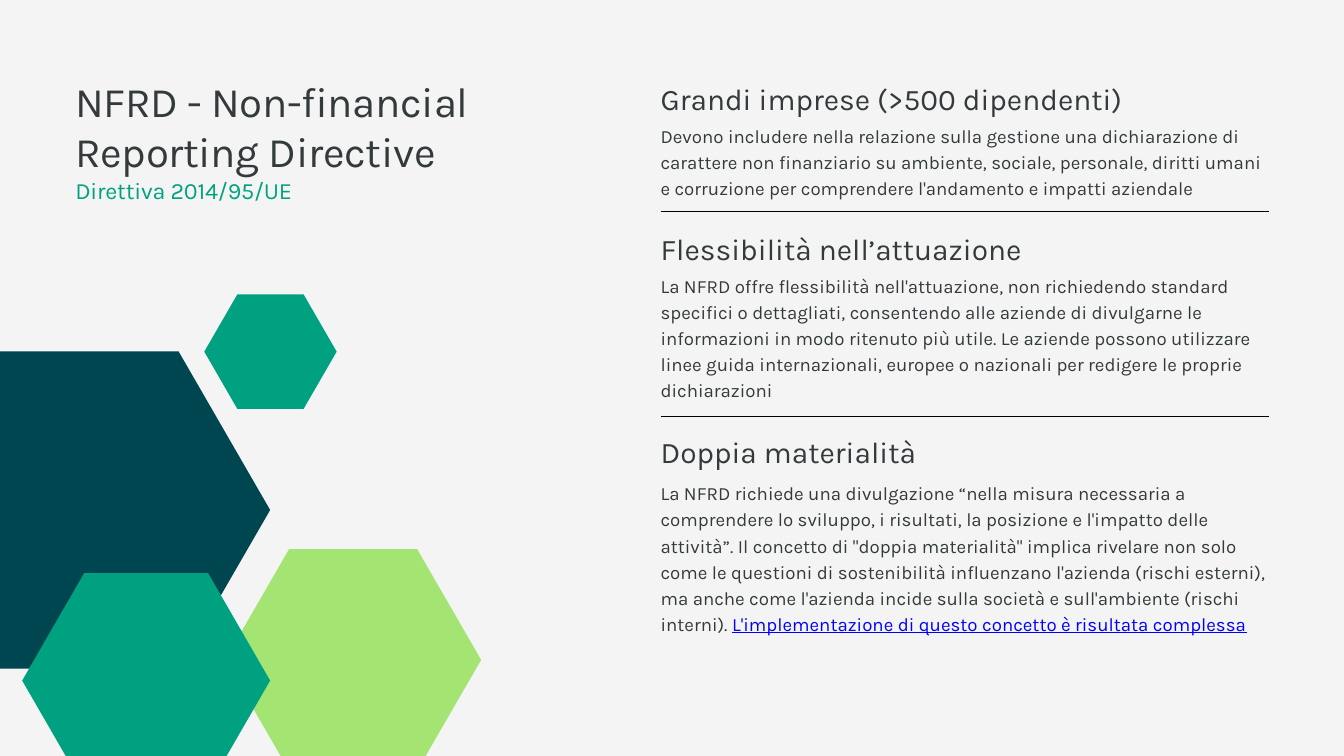
from pptx import Presentation
from pptx import util as u
from pptx.dml.color import RGBColor
from pptx.enum import shapes, text
from lxml import etree

INK, GREEN, NAVY, LIME, LINK = "333A3B", "00A181", "004651", "A4E473", "0000FF"
A = "{http://schemas.openxmlformats.org/drawingml/2006/main}"


def color(fmt, value):
    fmt.rgb = RGBColor.from_string(value)


def add_text(tf, p, words, size, leading, fill=INK, underline=None, spacing=None):
    """Append a formatted run to p and set up its frame and line spacing."""
    for name, value in dict(margin_left=0, margin_top=0, margin_right=0, margin_bottom=0,
                            word_wrap=True, auto_size=text.MSO_AUTO_SIZE.NONE,
                            vertical_anchor=text.MSO_ANCHOR.TOP).items():
        setattr(tf, name, value)
    p.alignment = text.PP_ALIGN.LEFT
    p.line_spacing = u.Pt(leading)
    r = p.add_run()
    r.text = words
    for name, value in dict(name="Karla", size=u.Pt(size), underline=underline).items():
        setattr(r.font, name, value)
    color(r.font.color, fill)
    if spacing is not None:
        r.font._element.set("spc", str(spacing))


prs = Presentation()
prs.slide_width, prs.slide_height = u.Inches(20), u.Inches(11.25)
s = prs.slides.add_slide(prs.slide_layouts[5])
s.background.fill.solid()
color(s.background.fill.fore_color, "F4F4F4")

# Title and subtitle
title = s.shapes.title
title.left, title.top, title.width, title.height = map(u.Inches, (1.12, 1.12, 6.65, 1.89))
tf = title.text_frame
add_text(tf, tf.paragraphs[0], "NFRD - Non-financial Reporting Directive", 45, 54, spacing=-40)
add_text(tf, tf.add_paragraph(), "Direttiva 2014/95/UE", 25, 30, GREEN, spacing=-20)

# Regular hexagons: left, top, width, fill
for left, top, width, fill in [
    (-1.43, 5.23, 5.45, NAVY),
    (3.35, 8.17, 3.81, LIME),
    (3.04, 4.38, 1.97, GREEN),
    (0.33, 8.53, 3.69, GREEN),
]:
    sp = s.shapes.add_shape(shapes.MSO_SHAPE.HEXAGON, u.Inches(left), u.Inches(top),
                            u.Inches(width), u.Inches(width * 3 ** 0.5 / 2))
    sp.adjustments[0] = 0.5 / 3 ** 0.5
    sp.shadow.inherit = False
    sp.fill.solid()
    color(sp.fill.fore_color, fill)
    sp.line.fill.background()

# Sections: heading top, body top, body height, heading, body, underlined ending
LEFT, WIDTH = 9.83, 9.05
for head_top, body_top, height, heading, body, ending in [
    (1.2, 1.8, 1.15, "Grandi imprese (>500 dipendenti)",
     "Devono includere nella relazione sulla gestione una dichiarazione di carattere non "
     "finanziario su ambiente, sociale, personale, diritti umani e corruzione per comprendere "
     "l'andamento e impatti aziendale", ""),
    (3.43, 4.03, 1.91, "Flessibilità nell’attuazione",
     "La NFRD offre flessibilità nell'attuazione, non richiedendo standard specifici o "
     "dettagliati, consentendo alle aziende di divulgarne le informazioni in modo ritenuto più "
     "utile. Le aziende possono utilizzare linee guida internazionali, europee o nazionali per "
     "redigere le proprie dichiarazioni", ""),
    (6.46, 7.12, 2.33, "Doppia materialità",
     "La NFRD richiede una divulgazione “nella misura necessaria a comprendere lo sviluppo, i "
     "risultati, la posizione e l'impatto delle attività”. Il concetto di \"doppia materialità\" "
     "implica rivelare non solo come le questioni di sostenibilità influenzano l'azienda (rischi "
     "esterni), ma anche come l'azienda incide sulla società e sull'ambiente (rischi interni). ",
     "L'implementazione di questo concetto è risultata complessa"),
]:
    for top, h, words, size, leading in [(head_top, 0.54, heading, 32, 38.4),
                                         (body_top, height, body, 20, 28)]:
        tf = s.shapes.add_textbox(*map(u.Inches, (LEFT, top, WIDTH, h))).text_frame
        add_text(tf, tf.paragraphs[0], words, size, leading)
    if ending:
        add_text(tf, tf.paragraphs[0], ending, 20, 28, LINK, underline=True)

# Dividers between sections
for y in (3.14, 6.2):
    line = s.shapes.add_connector(shapes.MSO_CONNECTOR.STRAIGHT, u.Inches(LEFT), u.Inches(y),
                                  u.Inches(LEFT + WIDTH), u.Inches(y))
    color(line.line.color, "000000")
    line.line.width = u.Pt(0.75)
    etree.SubElement(line._element.spPr, A + "effectLst")

prs.save("out.pptx")
